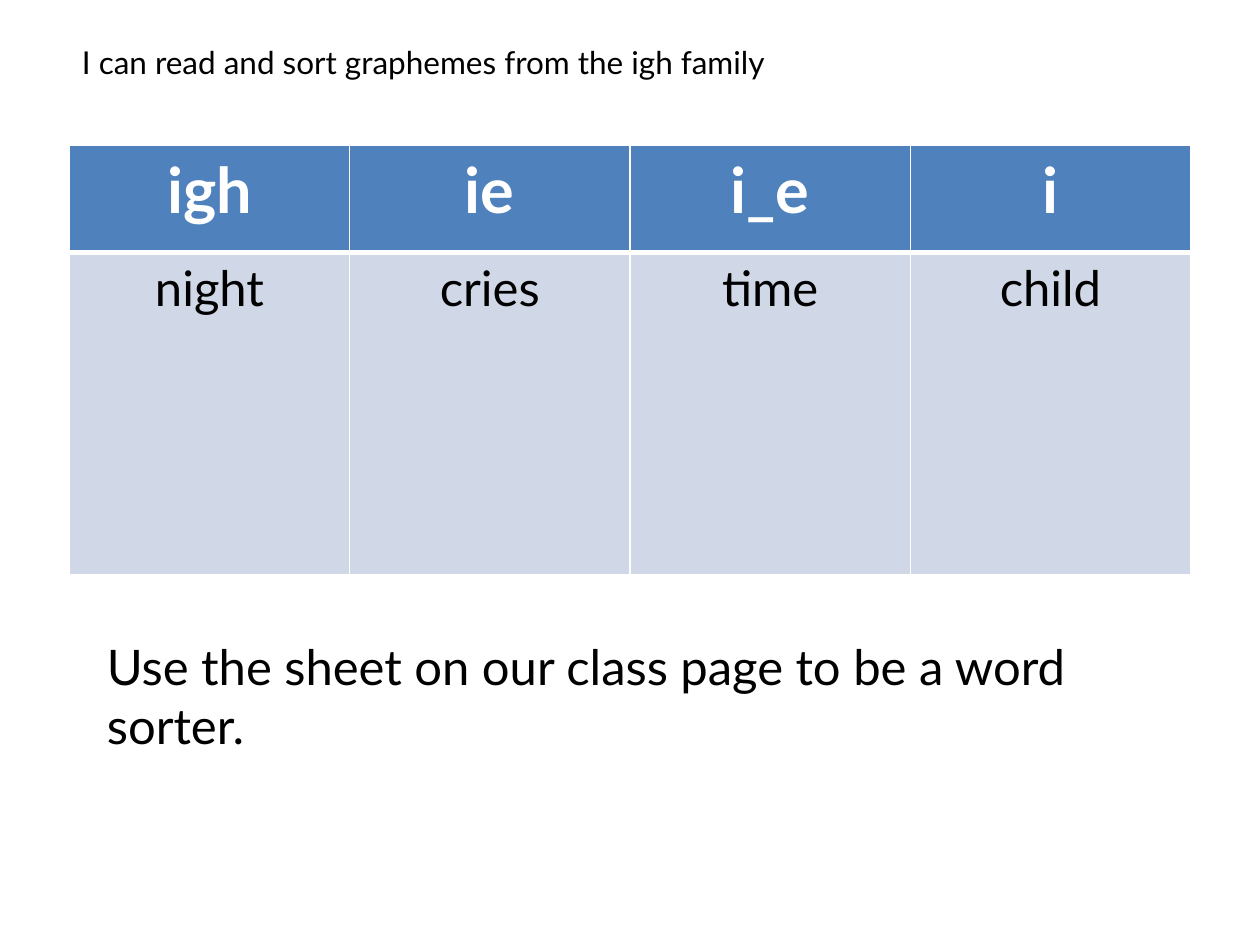
from dataclasses import dataclass

from lxml import etree
from pptx import Presentation
from pptx.dml.color import RGBColor
from pptx.enum import text
from pptx.oxml import ns
from pptx.util import Pt

COLOURS = {"black": "000000", "white": "FFFFFF", "header": "4F81BD", "body": "D0D8E8"}
FONT = "Lato"
TITLE_ONLY = 5


@dataclass
class Box:
    left: float
    top: float
    width: float
    height: float

    def lengths(self) -> tuple:
        return Pt(self.left), Pt(self.top), Pt(self.width), Pt(self.height)


@dataclass
class RowStyle:
    height: float
    fill: str
    colour: str
    size: float
    bold: bool
    borders: dict


TITLE_BOX = Box(39.6, 20.9, 640.8, 51.1)
TABLE_BOX = Box(39.6, 83, 640.8, 245.5)
TASK_BOX = Box(54, 360, 612, 97.2)

HEADER = RowStyle(61.2, "header", "white", 36, True, {"L": 1, "R": 1, "T": 1, "B": 3})
BODY = RowStyle(184.3, "body", "black", 28, False, {"L": 1, "R": 1, "T": 3, "B": 1})
ROWS = [
    (HEADER, ["igh", "ie", "i_e", "i"]),
    (BODY, ["night", "cries", "time", "child"]),
]


def write(frame, words: str, *, size: float, colour: str = "black",
          bold: bool = False, align=text.PP_ALIGN.LEFT) -> None:
    frame.word_wrap = True
    paragraph = frame.paragraphs[0]
    paragraph.alignment = align
    run = paragraph.add_run()
    run.text = words
    run.font.name = FONT
    run.font.size = Pt(size)
    run.font.bold = bold
    run.font.color.rgb = RGBColor.from_string(COLOURS[colour])


def add_borders(cell, widths: dict) -> None:
    properties = cell._tc.get_or_add_tcPr()
    for side, width in widths.items():
        line = etree.SubElement(properties, ns.qn(f"a:ln{side}"), w=str(Pt(width)))
        fill = etree.SubElement(line, ns.qn("a:solidFill"))
        etree.SubElement(fill, ns.qn("a:srgbClr"), val=COLOURS["white"])


def add_word_table(slide, box: Box) -> None:
    columns = len(ROWS[0][1])
    table = slide.shapes.add_table(len(ROWS), columns, *box.lengths()).table
    for column in table.columns:
        column.width = Pt(box.width / columns)
    for row, (style, words) in zip(table.rows, ROWS):
        row.height = Pt(style.height)
        for cell, word in zip(row.cells, words):
            add_borders(cell, style.borders)
            cell.fill.solid()
            cell.fill.fore_color.rgb = RGBColor.from_string(COLOURS[style.fill])
            write(cell.text_frame, word, size=style.size, colour=style.colour,
                  bold=style.bold, align=text.PP_ALIGN.CENTER)


def main() -> None:
    presentation = Presentation()
    presentation.slide_width, presentation.slide_height = Pt(720), Pt(540)
    slide = presentation.slides.add_slide(presentation.slide_layouts[TITLE_ONLY])

    # Learning goal
    title = slide.shapes.title
    title.left, title.top, title.width, title.height = TITLE_BOX.lengths()
    title.text_frame.vertical_anchor = text.MSO_ANCHOR.TOP
    title.text_frame.auto_size = text.MSO_AUTO_SIZE.NONE
    write(title.text_frame, "I can read and sort graphemes from the igh family", size=18)

    # Grapheme table
    add_word_table(slide, TABLE_BOX)

    # Task
    task = slide.shapes.add_textbox(*TASK_BOX.lengths())
    write(task.text_frame, "Use the sheet on our class page to be a word sorter.", size=28)

    presentation.save("out.pptx")


if __name__ == "__main__":
    main()
